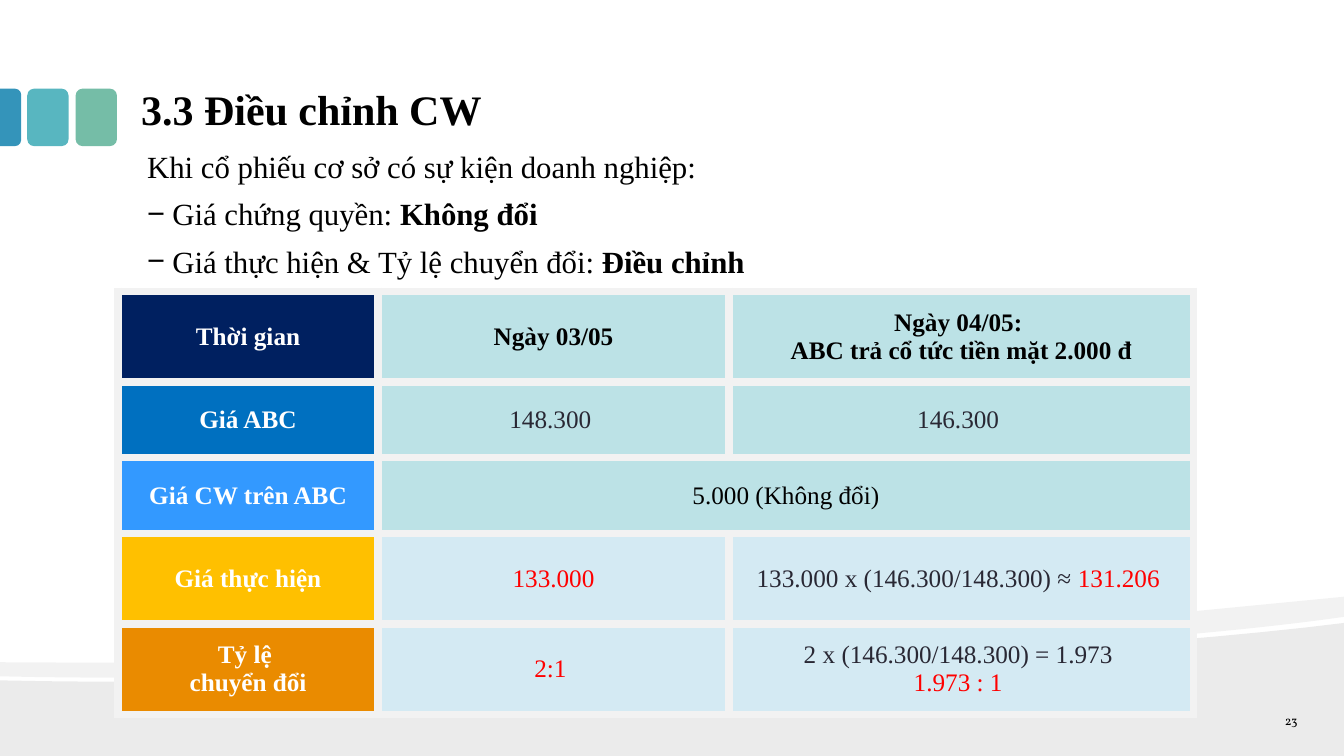
import dataclasses

import pptx
import pptx.dml.color
import pptx.enum.shapes
import pptx.enum.text
import pptx.oxml
import pptx.oxml.ns
import pptx.util
from lxml import etree

Inches = pptx.util.Inches
Pt = pptx.util.Pt
ShapeType = pptx.enum.shapes.MSO_SHAPE
Anchor = pptx.enum.text.MSO_ANCHOR
Align = pptx.enum.text.PP_ALIGN

FONT = "Times New Roman"
BLACK, WHITE, RED, DARK = "000000", "FFFFFF", "FF0000", "292834"
TEAL, PALE_BLUE = "BCE2E6", "D4EAF3"
BORDER_COLOUR = "F2F2F2"
COLUMN_WIDTHS = (2.58, 3.48, 4.61)
ROW_HEIGHTS = (0.9, 0.75, 0.75, 0.9, 0.9)

Point = tuple[float, float]


@dataclasses.dataclass(frozen=True)
class Span:
    text: str
    colour: str = BLACK
    bold: bool = False


@dataclasses.dataclass(frozen=True)
class Cell:
    fill: str
    lines: tuple[tuple[Span, ...], ...]


@dataclasses.dataclass(frozen=True)
class Tab:
    left: float
    width: float
    colour: str


@dataclasses.dataclass(frozen=True)
class Wave:
    outline: list[Point]
    opacity: int


def heading(fill: str, *lines: str, colour: str = WHITE) -> Cell:
    return Cell(fill, tuple((Span(line, colour, True),) for line in lines))


def value(fill: str, *lines: tuple[Span, ...]) -> Cell:
    return Cell(fill, lines)


def curve(start: Point, first: Point, second: Point, end: Point, steps: int = 24) -> list[Point]:
    """Return points along a cubic curve, both ends included."""
    points = []
    for step in range(steps + 1):
        t = step / steps
        weights = ((1 - t) ** 3, 3 * t * (1 - t) ** 2, 3 * t * t * (1 - t), t ** 3)
        controls = (start, first, second, end)
        points.append(tuple(sum(w * c[axis] for w, c in zip(weights, controls)) for axis in (0, 1)))
    return points


WAVES = (
    Wave([(13.33, 7.5), (0, 7.5)]
         + curve((0, 6.75), (3.52, 6.83), (10.42, 6.55), (13.33, 6.18)), 8),
    Wave(curve((13.33, 6.12), (12.56, 6.23), (11.49, 6.33), (10.29, 6.41))
         + curve((10.29, 6.41), (6.98, 6.63), (2.58, 6.77), (0, 6.71))
         + curve((0, 6.57), (6.52, 6.62), (9.71, 6.27), (13.33, 5.92)), 5),
)

TABS = (Tab(0.75, 0.41, "75BDA7"), Tab(0.27, 0.41, "58B6C0"))

BODY_LINES = (
    (Span("Khi cổ phiếu cơ sở có sự kiện doanh nghiệp:"),),
    (Span("Giá chứng quyền: "), Span("Không đổi", bold=True)),
    (Span("Giá thực hiện & Tỷ lệ chuyển đổi: "), Span("Điều chỉnh", bold=True)),
)

ROWS = (
    (heading("002060", "Thời gian"),
     heading(TEAL, "Ngày 03/05", colour=BLACK),
     heading(TEAL, "Ngày 04/05: ", "ABC trả cổ tức tiền mặt 2.000 đ", colour=BLACK)),
    (heading("0070C0", "Giá ABC"),
     value(TEAL, (Span("148.300 ", DARK),)),
     value(TEAL, (Span("146.300 ", DARK),))),
    (heading("3399FF", "Giá CW trên ABC"),
     value(TEAL, (Span("5.000 (Không đổi)"),))),
    (heading("FFC000", "Giá thực hiện"),
     value(PALE_BLUE, (Span("133.000", RED),)),
     value(PALE_BLUE, (Span("133.000 x (146.300/148.300) ≈ ", DARK), Span("131.206 ", RED)))),
    (heading("EA8B00", "Tỷ lệ ", "chuyển đổi"),
     value(PALE_BLUE, (Span("2:1 ", RED),)),
     value(PALE_BLUE, (Span("2 x (146.300/148.300) = 1.973 ", DARK),),
           (Span("1.973 : 1 ", RED),))),
)


def paint(target, colour: str) -> None:
    """Give a fill or a font one solid colour."""
    if hasattr(target, "solid"):
        target.solid()
        target.fore_color.rgb = pptx.dml.color.RGBColor.from_string(colour)
    else:
        target.color.rgb = pptx.dml.color.RGBColor.from_string(colour)


def style_shape(shape, colour: str) -> None:
    shape.shadow.inherit = False
    paint(shape.fill, colour)
    shape.line.fill.background()


def write_spans(paragraph, spans: tuple[Span, ...], size: float, font: str = FONT) -> None:
    paragraph.font.name = font
    paragraph.font.size = Pt(size)
    for span in spans:
        run = paragraph.add_run()
        run.text = span.text
        target = paragraph.font if len(spans) == 1 else run.font
        target.bold = span.bold
        paint(target, span.colour)


def write_lines(frame, lines: tuple[tuple[Span, ...], ...], size: float, align, font: str = FONT) -> None:
    for index, spans in enumerate(lines):
        paragraph = frame.add_paragraph() if index else frame.paragraphs[0]
        paragraph.alignment = align
        write_spans(paragraph, spans, size, font)


def place(shape, left: float, top: float, width: float, height: float, anchor) -> None:
    """Move a text shape and set its frame."""
    shape.left, shape.top = Inches(left), Inches(top)
    shape.width, shape.height = Inches(width), Inches(height)
    frame = shape.text_frame
    frame.word_wrap = True
    frame.auto_size = pptx.enum.text.MSO_AUTO_SIZE.NONE
    frame.vertical_anchor = anchor
    frame.margin_left = frame.margin_right = Inches(0.13)
    frame.margin_top = frame.margin_bottom = Inches(0.07)


def set_bullet(paragraph, mark: str) -> None:
    properties = paragraph._p.get_or_add_pPr()
    properties.set("marL", str(Inches(0.25)))
    properties.set("indent", str(-Inches(0.25)))
    bullet = pptx.oxml.parse_xml(
        f'<a:{"buChar" if mark else "buNone"} {pptx.oxml.ns.nsdecls("a")}/>')
    if mark:
        bullet.set("char", mark)
    properties.find(pptx.oxml.ns.qn("a:defRPr")).addprevious(bullet)


def add_border(cell) -> None:
    properties = cell._tc.get_or_add_tcPr()
    for side in ("lnL", "lnR", "lnT", "lnB"):
        properties.append(pptx.oxml.parse_xml(
            f'<a:{side} {pptx.oxml.ns.nsdecls("a")} w="{Pt(6)}"><a:solidFill>'
            f'<a:srgbClr val="{BORDER_COLOUR}"/></a:solidFill></a:{side}>'))


def draw_background(slide) -> None:
    for wave in WAVES:
        points = [(Inches(x), Inches(y)) for x, y in wave.outline]
        builder = slide.shapes.build_freeform(*points[0])
        builder.add_line_segments(points[1:])
        shape = builder.convert_to_shape()
        style_shape(shape, BLACK)
        colour = shape._element.spPr.find(".//" + pptx.oxml.ns.qn("a:srgbClr"))
        etree.SubElement(colour, pptx.oxml.ns.qn("a:alpha"), val=str(wave.opacity * 1000))
    for tab in TABS:
        shape = slide.shapes.add_shape(ShapeType.ROUNDED_RECTANGLE, Inches(tab.left),
                                       Inches(0.88), Inches(tab.width), Inches(0.57))
        style_shape(shape, tab.colour)
    edge_tab = slide.shapes.add_shape(ShapeType.ROUND_2_SAME_RECTANGLE, Inches(-0.18),
                                      Inches(1.06), Inches(0.57), Inches(0.21))
    edge_tab.rotation = 90
    edge_tab.adjustments[0] = 0.29
    style_shape(edge_tab, "3494BA")


def write_text(slide) -> None:
    title, body = slide.shapes.title, slide.placeholders[1]
    place(title, 1.17, 0.6, 10.67, 0.8, Anchor.BOTTOM)
    title.text_frame.margin_left = Inches(0.23)
    write_lines(title.text_frame, ((Span("3.3 Điều chỉnh CW", bold=True),),), 30, Align.LEFT)
    place(body, 1.33, 1.38, 10.5, 1.51, Anchor.TOP)
    write_lines(body.text_frame, BODY_LINES, 22, Align.LEFT)
    for index, paragraph in enumerate(body.text_frame.paragraphs):
        paragraph.space_before = Pt(6)
        paragraph.line_spacing = 1.05
        set_bullet(paragraph, "−" if index else "")


def draw_table(slide) -> None:
    table = slide.shapes.add_table(len(ROWS), len(COLUMN_WIDTHS), Inches(1.17), Inches(2.89),
                                   Inches(sum(COLUMN_WIDTHS)), Inches(sum(ROW_HEIGHTS))).table
    table.first_row = table.horz_banding = False
    for column, width in zip(table.columns, COLUMN_WIDTHS):
        column.width = Inches(width)
    for row, height in zip(table.rows, ROW_HEIGHTS):
        row.height = Inches(height)
    for cell in table.iter_cells():
        add_border(cell)
        paint(cell.fill, TEAL)
    for row_index, row in enumerate(ROWS):
        for column_index, content in enumerate(row):
            cell = table.cell(row_index, column_index)
            paint(cell.fill, content.fill)
            cell.vertical_anchor = Anchor.MIDDLE
            write_lines(cell.text_frame, content.lines, 18, Align.CENTER)
        if len(row) < len(COLUMN_WIDTHS):
            cell.merge(table.cell(row_index, len(COLUMN_WIDTHS) - 1))


def main() -> None:
    presentation = pptx.Presentation()
    presentation.slide_width, presentation.slide_height = Inches(13.33), Inches(7.5)
    slide = presentation.slides.add_slide(presentation.slide_layouts[1])
    draw_background(slide)
    write_text(slide)
    draw_table(slide)
    number = slide.shapes.add_textbox(0, 0, 0, 0)
    place(number, 12.11, 7.05, 0.89, 0.2, Anchor.MIDDLE)
    write_lines(number.text_frame, ((Span("23"),),), 9, Align.RIGHT, "Vollkorn")
    presentation.save("out.pptx")


if __name__ == "__main__":
    main()
